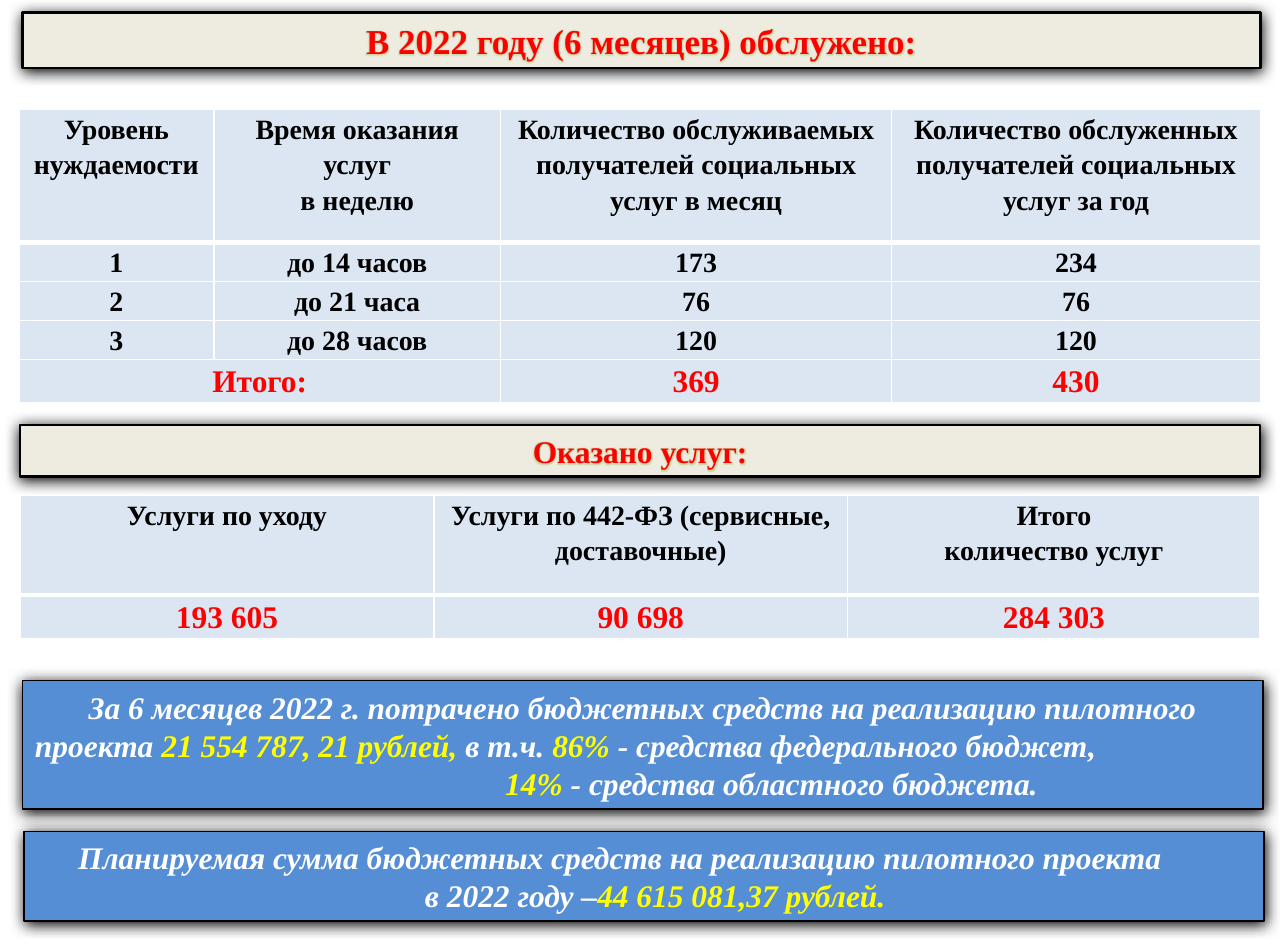
from pptx import Presentation
from pptx.dml.color import RGBColor
from pptx.enum.shapes import MSO_SHAPE
from pptx.enum.text import MSO_ANCHOR, PP_ALIGN
from pptx.oxml import parse_xml
from pptx.oxml.ns import nsdecls
from pptx.util import Pt

PX = 9144
FONT = "Times New Roman"
BLACK = RGBColor(0x00, 0x00, 0x00)
WHITE = RGBColor(0xFF, 0xFF, 0xFF)
RED = RGBColor(0xFF, 0x00, 0x00)
YELLOW = RGBColor(0xFF, 0xFF, 0x00)
CREAM = RGBColor(0xEE, 0xEC, 0xE1)
BLUE = RGBColor(0x55, 0x8E, 0xD5)
PALE = RGBColor(0xDC, 0xE6, 0xF2)
MID, LEFT = PP_ALIGN.CENTER, PP_ALIGN.LEFT

SHADOW = (f'<a:effectLst {nsdecls("a")}><a:outerShdw blurRad="107950" dist="12700" '
          'dir="5400000" algn="ctr" rotWithShape="0"><a:srgbClr val="000000"/>'
          '</a:outerShdw></a:effectLst>')
GLOW = (f'<a:effectLst {nsdecls("a")}><a:glow rad="50800"><a:srgbClr val="9BBB59">'
        '<a:alpha val="40000"/></a:srgbClr></a:glow></a:effectLst>')


def add_run(para, text, size, color, slant=False):
    run = para.add_run()
    run.text = text
    font = run.font
    font.size = Pt(size)
    font.bold = True
    font.italic = slant
    font.color.rgb = color
    font.name = FONT
    return run


def add_box(area, fill, weight):
    box = page.shapes.add_shape(MSO_SHAPE.RECTANGLE, *[n * PX for n in area])
    box.shadow.inherit = False
    box.fill.solid()
    box.fill.fore_color.rgb = fill
    box.line.color.rgb = BLACK
    box.line.width = Pt(weight)
    props = box.element.spPr
    props.replace(props.find("{*}effectLst"), parse_xml(SHADOW))
    box.text_frame.word_wrap = True
    box.text_frame.vertical_anchor = MSO_ANCHOR.MIDDLE
    return box.text_frame


deck = Presentation()
deck.slide_width, deck.slide_height = 1024 * PX, 756 * PX
page = deck.slides.add_slide(deck.slide_layouts[6])

TITLES = [
    ((18, 10, 984, 44), "В 2022 году (6 месяцев) обслужено:", 20),
    ((16, 338, 986, 41), "Оказано услуг:", 18),
]
for area, text, size in TITLES:
    para = add_box(area, CREAM, 1.5).paragraphs[0]
    para.alignment = MID
    run = add_run(para, text, size, RED)
    run.font._element.find("{*}solidFill").addnext(parse_xml(GLOW))

GRIDS = [
    (15, 87, [155, 228, 311, 293], [106, 31, 31, 31, 34], [
        ["Уровень нуждаемости", "Время оказания услуг\nв неделю",
         "Количество обслуживаемых получателей социальных услуг в месяц",
         "Количество обслуженных получателей социальных услуг за год"],
        ["1", "до 14 часов", "173", "234"],
        ["2", "до 21 часа", "76", "76"],
        ["3", "до 28 часов", "120", "120"],
        ["Итого:", "", "369", "430"],
    ]),
    (16, 394, [329, 329, 328], [79, 35], [
        ["Услуги по уходу", "Услуги по 442-ФЗ (сервисные, доставочные)",
         "Итого\nколичество услуг"],
        ["193 605", "90 698", "284 303"],
    ]),
]
for left, top, wide, high, rows in GRIDS:
    table = page.shapes.add_table(len(high), len(wide), left * PX, top * PX,
                                  sum(wide) * PX, sum(high) * PX).table
    for col, width in zip(table.columns, wide):
        col.width = width * PX
    for row, height in zip(table.rows, high):
        row.height = height * PX
    for r, row in enumerate(rows):
        last = r == len(rows) - 1
        for c, text in enumerate(row):
            cell = table.cell(r, c)
            cell.margin_left = cell.margin_right = 8 * PX
            cell.margin_top = cell.margin_bottom = 0
            for side in "LRTB":
                thick = (r, side) in [(0, "B"), (1, "T")]
                cell._tc.get_or_add_tcPr().append(parse_xml(
                    f'<a:ln{side} {nsdecls("a")} w="{Pt(3 if thick else 1)}"><a:solidFill>'
                    f'<a:srgbClr val="{WHITE}"/></a:solidFill></a:ln{side}>'))
            cell.fill.solid()
            cell.fill.fore_color.rgb = PALE
            if not text:
                table.cell(r, c - 1).merge(cell)
                continue
            for i, line in enumerate(text.split("\n")):
                frame = cell.text_frame
                para = frame.add_paragraph() if i else frame.paragraphs[0]
                para.alignment = MID
                para.line_spacing = 1.15
                add_run(para, line, 18 if last else 16, RED if last else BLACK)

NOTES = [
    ((18, 541, 986, 102), [
        (MID, 0, 0, [("За 6 месяцев 2022 г. потрачено бюджетных средств "
                      "на реализацию пилотного", WHITE)]),
        (LEFT, 0, 0, [("проекта ", WHITE), ("21 554 787, 21 рублей, ", YELLOW),
                      ("в т.ч. ", WHITE), ("86% ", YELLOW),
                      ("- средства федерального бюджет,", WHITE)]),
        (MID, 205, 0, [("14%", YELLOW), (" - средства областного бюджета.", WHITE)]),
    ]),
    ((19, 661, 986, 71), [
        (MID, 0, 38, [("Планируемая сумма бюджетных средств "
                       "на реализацию пилотного проекта", WHITE)]),
        (MID, 18, 0, [("в 2022 году –", WHITE), ("44 615 081,37 рублей.", YELLOW)]),
    ]),
]
for area, lines in NOTES:
    frame = add_box(area, BLUE, 1)
    for i, (align, left, right, runs) in enumerate(lines):
        para = frame.add_paragraph() if i else frame.paragraphs[0]
        para.alignment = align
        props = para._p.get_or_add_pPr()
        props.set("marL", str(left * PX))
        props.set("marR", str(right * PX))
        for text, color in runs:
            add_run(para, text, 18, color, True)

deck.save("out.pptx")
